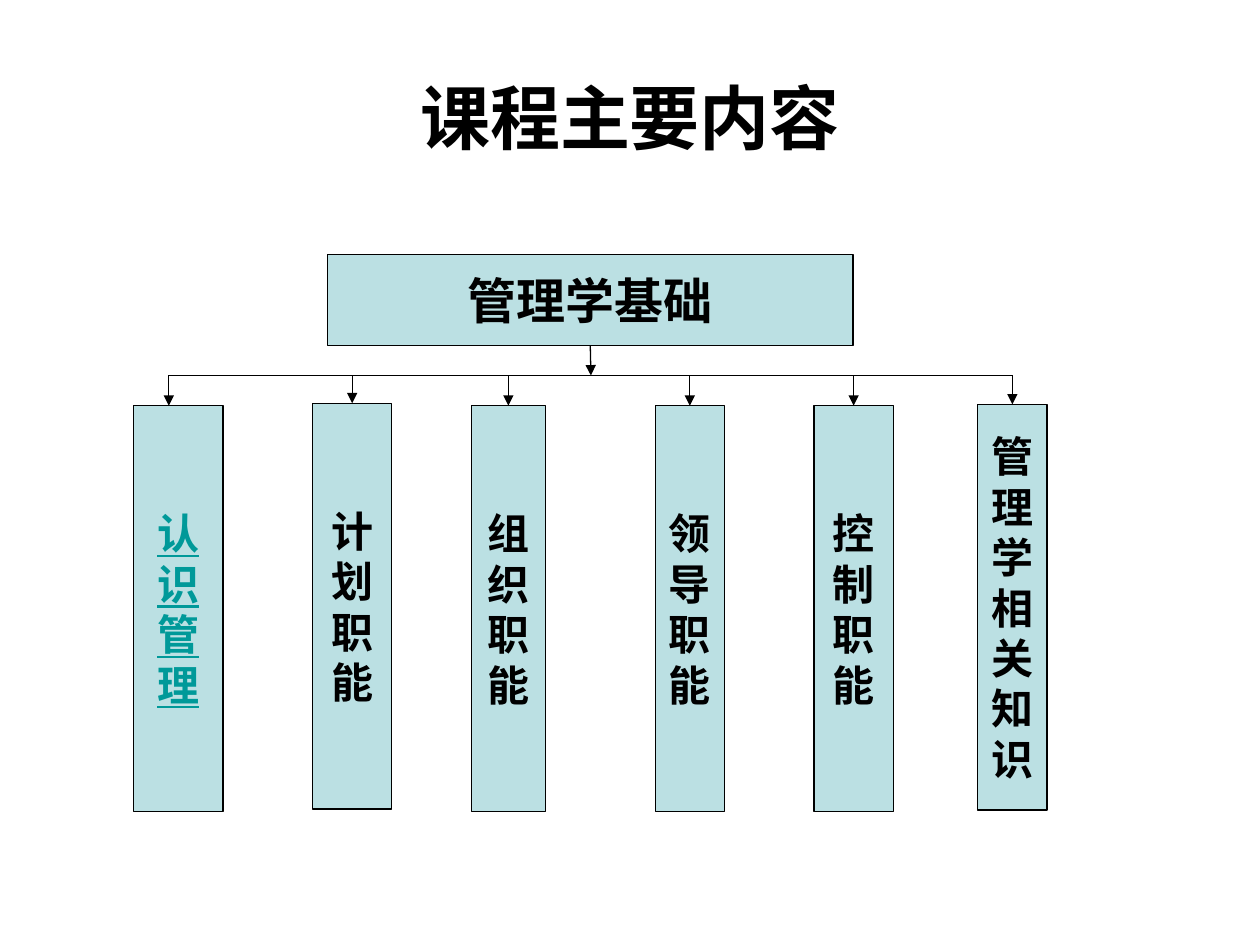
import pptx
import pptx.dml.color
import pptx.enum.shapes
import pptx.enum.text
import pptx.oxml.ns
import pptx.util
from lxml import etree

Inches = pptx.util.Inches
BLACK = pptx.dml.color.RGBColor(0x00, 0x00, 0x00)
TEAL = pptx.dml.color.RGBColor(0x00, 0x99, 0x99)
PALE_BLUE = pptx.dml.color.RGBColor(0xBB, 0xE0, 0xE3)
CJK_FONT = "Noto Sans CJK SC"
TOP, BOTTOM = 0, 2

# Topic, left, top, width, whether it is underlined
TOPICS = [
    ("认识管理", 1.06, 3.22, 0.71, True),
    ("计划职能", 2.48, 3.2, 0.63, False),
    ("组织职能", 3.74, 3.22, 0.59, False),
    ("领导职能", 5.2, 3.22, 0.55, False),
    ("控制职能", 6.46, 3.22, 0.63, False),
    ("管理学相关知识", 7.76, 3.21, 0.55, False),
]
TOPIC_HEIGHT = 3.22
RAIL_LEFT, RAIL_RIGHT, RAIL_Y = 1.34, 8.03, 2.98


def write_text(frame, lines, size=24, font="Arial", color=BLACK, underline=None):
    """Fill a text frame with centred bold paragraphs, one for each line."""
    frame.vertical_anchor = pptx.enum.text.MSO_ANCHOR.MIDDLE
    for index, line in enumerate(lines):
        para = frame.add_paragraph() if index else frame.paragraphs[0]
        para.alignment = pptx.enum.text.PP_ALIGN.CENTER
        span = para.add_run()
        span.text = line
        span.font.size = pptx.util.Pt(size)
        span.font.name = font
        span.font.bold = True
        span.font.underline = underline
        span.font.color.rgb = color
        east_asian = etree.SubElement(span.font._element, pptx.oxml.ns.qn("a:ea"))
        east_asian.set("typeface", CJK_FONT)


class Chart:
    """Style and current slide of the organisation chart."""

    fill = PALE_BLUE
    line_color = BLACK
    line_width = pptx.util.Pt(0.75)

    def __init__(self, page):
        self.page = page

    def title(self, text):
        box = self.page.shapes.title
        box.left, box.top = Inches(0.5), Inches(0.3)
        box.width, box.height = Inches(9), Inches(1.25)
        write_text(box.text_frame, [text], size=40, font=CJK_FONT)

    def box(self, lines, left, top, width, height, **text_format):
        box = self.page.shapes.add_shape(
            pptx.enum.shapes.MSO_SHAPE.RECTANGLE,
            Inches(left), Inches(top), Inches(width), Inches(height))
        box.shadow.inherit = False
        box.fill.solid()
        box.fill.fore_color.rgb = self.fill
        self.outline(box.line)
        box.text_frame.word_wrap = False
        write_text(box.text_frame, lines, **text_format)
        return box

    def outline(self, line):
        line.color.rgb = self.line_color
        line.width = self.line_width

    def line(self, start_x, start_y, end_x, end_y, arrow=False):
        line = self.page.shapes.add_connector(
            pptx.enum.shapes.MSO_CONNECTOR.STRAIGHT,
            Inches(start_x), Inches(start_y), Inches(end_x), Inches(end_y))
        self.outline(line.line)
        properties = line._element.spPr
        if arrow:
            tail = etree.SubElement(properties.find(pptx.oxml.ns.qn("a:ln")),
                                    pptx.oxml.ns.qn("a:tailEnd"))
            tail.set("type", "triangle")
        etree.SubElement(properties, pptx.oxml.ns.qn("a:effectLst"))
        return line


def main():
    deck = pptx.Presentation()
    deck.slide_width, deck.slide_height = Inches(10), Inches(7.5)
    chart = Chart(deck.slides.add_slide(deck.slide_layouts[5]))
    chart.title("课程主要内容")

    # Course box and its arrow down to the rail
    course = chart.box(["管理学基础"], 2.6, 2.02, 4.17, 0.72, size=28)
    stem = chart.line(4.69, 2.74, 4.69, RAIL_Y, arrow=True)
    stem.begin_connect(course, BOTTOM)
    chart.line(RAIL_LEFT, RAIL_Y, RAIL_RIGHT, RAIL_Y)

    # Topic boxes, one character a line, each below its arrow
    for topic, left, top, width, underlined in TOPICS:
        box = chart.box(topic, left, top, width, TOPIC_HEIGHT,
                        color=TEAL if underlined else BLACK,
                        underline=underlined or None)
        if underlined:
            # This arrow drops from the rail's end, left of the box's middle
            chart.line(RAIL_LEFT, RAIL_Y, RAIL_LEFT, top, arrow=True)
        else:
            middle = left + width / 2
            arrow = chart.line(middle, RAIL_Y, middle, top, arrow=True)
            arrow.end_connect(box, TOP)

    deck.save("out.pptx")


if __name__ == "__main__":
    main()
